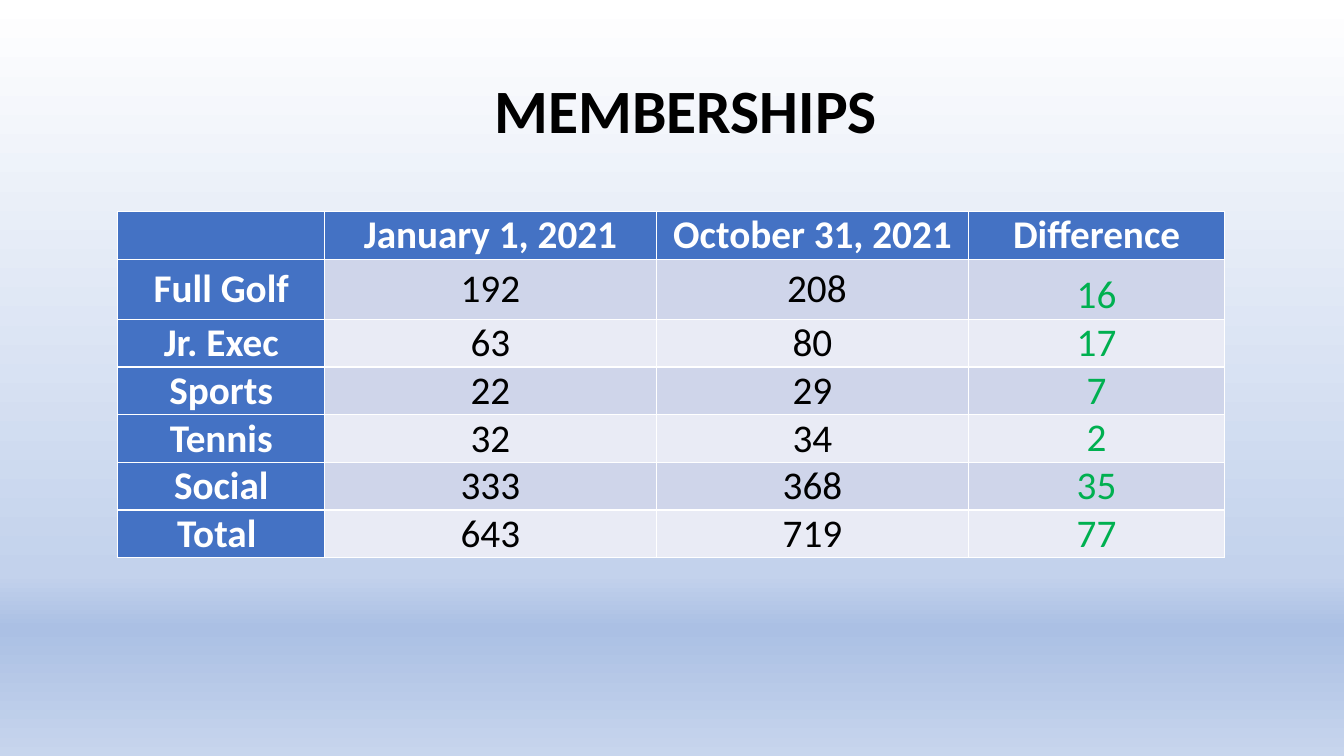
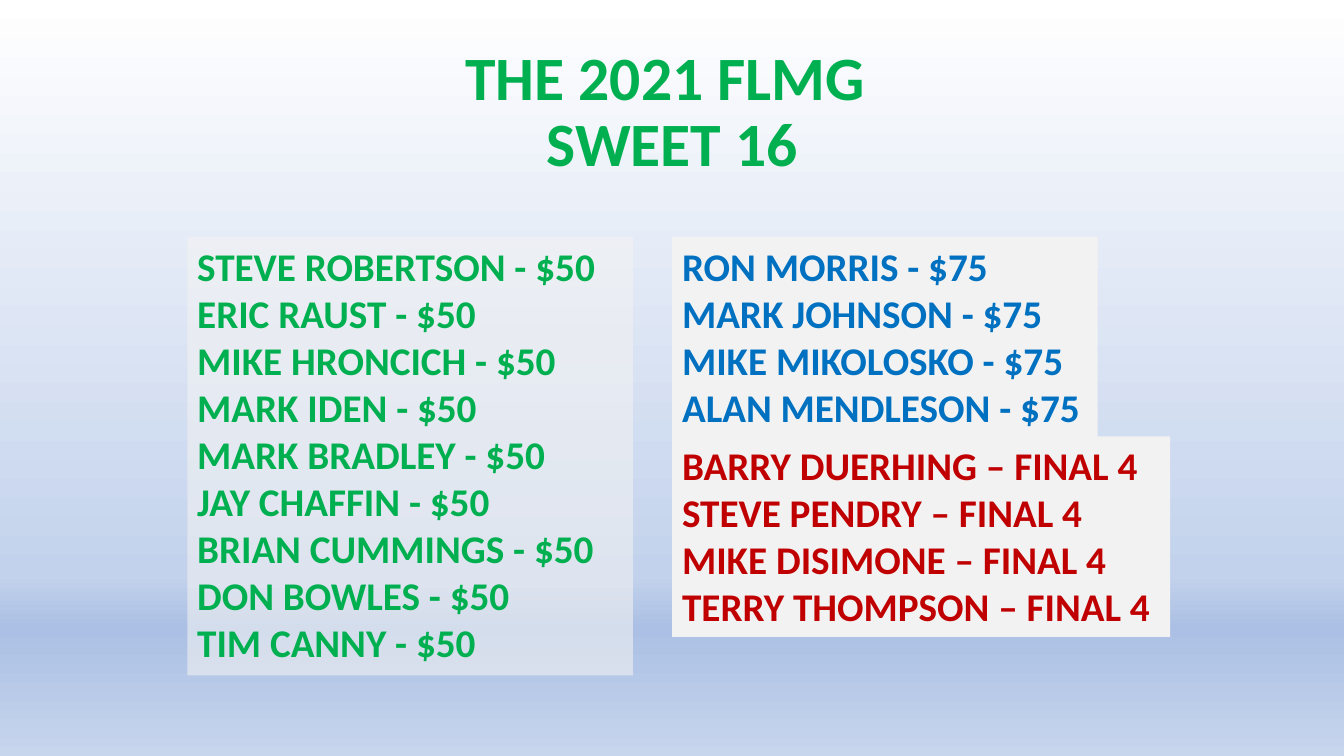
import pptx
import pptx.util
import pptx.dml.color
import pptx.enum.shapes
import pptx.enum.text
import pptx.oxml
import pptx.oxml.ns

Cm = pptx.util.Cm
Pt = pptx.util.Pt
Align = pptx.enum.text.PP_ALIGN
Anchor = pptx.enum.text.MSO_ANCHOR
qn = pptx.oxml.ns.qn


class Theme:
    font = "Calibri"
    title = 44
    body = 28
    black = "000000"
    white = "FFFFFF"
    green = "00B050"
    blue = "0070C0"
    red = "C00000"
    head = "4472C4"
    bands = ("CFD5EA", "E9EBF5")
    panel = "F2F2F2"
    back = ((0, "FFFFFF"), (76, "C3D2EC"), (83, "ABC0E4"), (100, "C7D5ED"))


MEMBERS = [
    ("", "January 1, 2021", "October 31, 2021", "Difference"),
    ("Full Golf", "192", " 208", "16"),
    ("Jr. Exec", "63", "80", "17"),
    ("Sports", "22", "29", "7"),
    ("Tennis", "32", "34", "2"),
    ("Social", "333", "368", "35"),
    ("Total ", "643", "719", "77"),
]
COLS = (5.21, 8.36, 7.87, 6.45)
ROWS = (1.2, 1.52) + (1.2,) * 5

FIFTY = ["STEVE ROBERTSON", "ERIC RAUST", "MIKE HRONCICH", "MARK IDEN",
         "MARK BRADLEY", "JAY CHAFFIN", "BRIAN CUMMINGS", "DON BOWLES",
         "TIM CANNY"]
SEVENTY = ["RON MORRIS", "MARK JOHNSON", "MIKE MIKOLOSKO", "ALAN MENDLESON"]
FINAL = ["BARRY DUERHING", "STEVE PENDRY", "MIKE DISIMONE", "TERRY THOMPSON"]

# names, ending, colour, left, top, width, opacity in percent
PANELS = [
    (FIFTY, " - $50", Theme.green, 4.72, 5.97, 11.23, 59),
    (SEVENTY, " - $75", Theme.blue, 16.94, 5.97, 10.72, 100),
    (FINAL, " – FINAL 4", Theme.red, 16.94, 11, 12.55, 100),
]
LINE, PAD = 1.2, 0.25


def rgb(code):
    return pptx.dml.color.RGBColor.from_string(code)


def style(frame, size, color, bold, align):
    for para in frame.paragraphs:
        para.alignment = align
        for run in para.runs:
            font = run.font
            font.name, font.size, font.bold = Theme.font, Pt(size), bold
            font.color.rgb = rgb(color)


def paint(master):
    """Give the master its gradient, top to bottom."""
    fill = master.background.fill
    fill.gradient()
    fill.gradient_angle = 270
    stops = next(master.element.iter(qn("a:gsLst")))
    for stop in list(stops):
        stops.remove(stop)
    for place, code in Theme.back:
        stop = pptx.oxml.parse_xml(
            f'<a:gs {pptx.oxml.ns.nsdecls("a")} pos="{place * 1000}">'
            f'<a:srgbClr val="{code}"/></a:gs>')
        stops.append(stop)


def add_slide(deck, text, color, width):
    slide = deck.slides.add_slide(deck.slide_layouts[6])
    box = slide.shapes.add_textbox(Cm(2.34), Cm(1.02), Cm(width), Cm(3.68))
    frame = box.text_frame
    frame.word_wrap = True
    frame.vertical_anchor = Anchor.MIDDLE
    frame.text = text
    frame.paragraphs[0].line_spacing = 0.9
    style(frame, Theme.title, color, True, Align.CENTER)
    return slide


def add_grid(slide):
    table = slide.shapes.add_table(
        len(ROWS), len(COLS), Cm(2.97), Cm(5.33),
        Cm(sum(COLS)), Cm(sum(ROWS))).table
    table.first_col = True
    for col, width in zip(table.columns, COLS):
        col.width = Cm(width)
    for r, (row, high) in enumerate(zip(MEMBERS, ROWS)):
        table.rows[r].height = Cm(high)
        for c, text in enumerate(row):
            cell = table.cell(r, c)
            label = r == 0 or c == 0
            last = c == len(COLS) - 1
            cell.margin_left = cell.margin_right = Cm(0.18)
            cell.margin_top = cell.margin_bottom = 0
            cell.vertical_anchor = Anchor.BOTTOM if r == 0 or last else Anchor.MIDDLE
            cell.fill.solid()
            cell.fill.fore_color.rgb = rgb(
                Theme.head if label else Theme.bands[(r - 1) % 2])
            color = Theme.white if label else Theme.green if last else Theme.black
            if text:
                cell.text_frame.text = text
                style(cell.text_frame, Theme.body, color, label, Align.CENTER)


def add_panel(slide, names, end, color, left, top, width, alpha):
    box = slide.shapes.add_shape(
        pptx.enum.shapes.MSO_SHAPE.RECTANGLE,
        Cm(left), Cm(top), Cm(width), Cm(len(names) * LINE + PAD))
    box.shadow.inherit = False
    box.line.fill.background()
    box.fill.solid()
    box.fill.fore_color.rgb = rgb(Theme.panel)
    if alpha < 100:
        tint = next(box.element.iter(qn("a:srgbClr")))
        tint.append(pptx.oxml.parse_xml(
            f'<a:alpha {pptx.oxml.ns.nsdecls("a")} val="{alpha * 1000}"/>'))
    frame = box.text_frame
    frame.word_wrap = True
    frame.auto_size = pptx.enum.text.MSO_AUTO_SIZE.SHAPE_TO_FIT_TEXT
    frame.vertical_anchor = Anchor.TOP
    frame.text = "\n".join(name + end for name in names)
    style(frame, Theme.body, color, True, Align.LEFT)


def main():
    deck = pptx.Presentation()
    deck.slide_width, deck.slide_height = Cm(33.87), Cm(19.05)
    paint(deck.slide_master)
    add_grid(add_slide(deck, "MEMBERSHIPS", Theme.black, 29.9))
    sweet = add_slide(deck, "THE 2021 FLMG \vSWEET 16", Theme.green, 29.21)
    for panel in PANELS:
        add_panel(sweet, *panel)
    deck.save("out.pptx")


if __name__ == "__main__":
    main()
